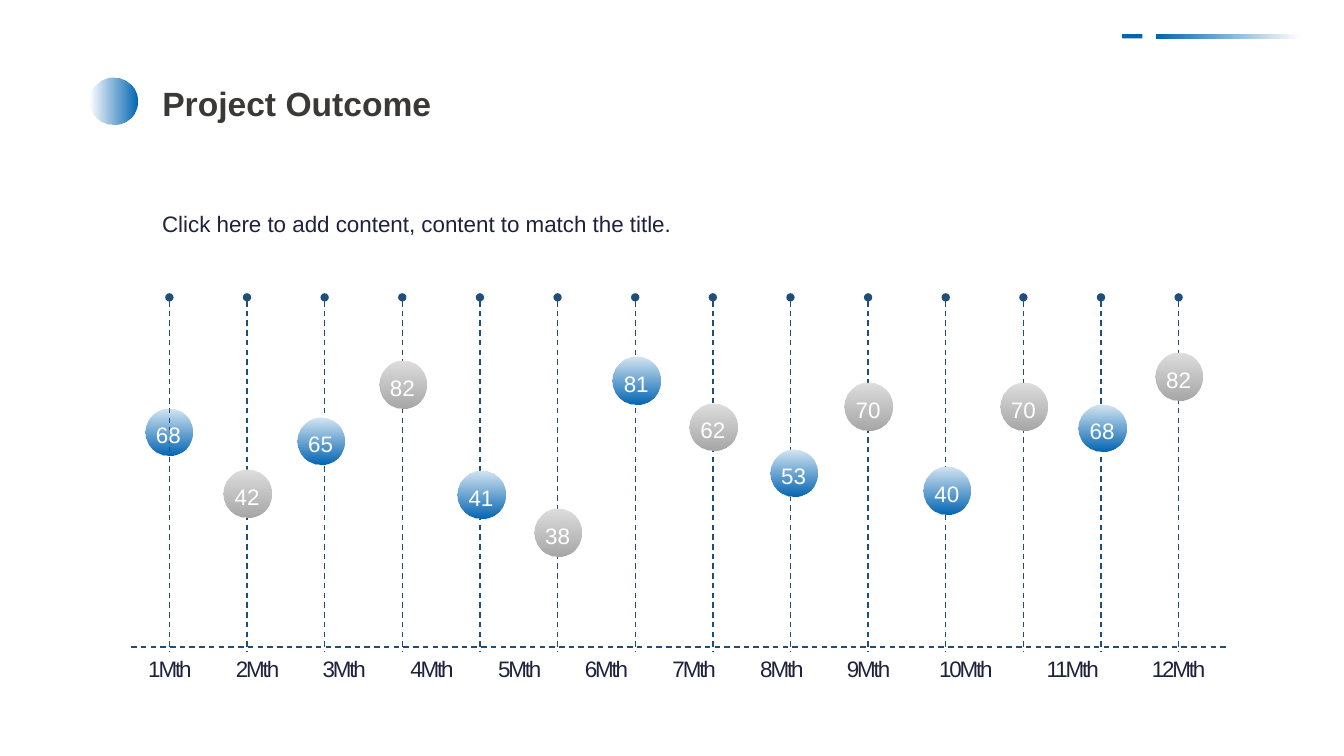
from dataclasses import dataclass

from lxml.etree import SubElement
from pptx import Presentation
from pptx.dml.color import RGBColor
from pptx.enum.dml import MSO_LINE
from pptx.enum.shapes import MSO_CONNECTOR, MSO_SHAPE as Shape
from pptx.enum.text import MSO_ANCHOR, MSO_AUTO_SIZE, PP_ALIGN as Align
from pptx.oxml.ns import qn
from pptx.util import Pt

EMU_PER_PX = 9144  # 100 px to the inch


@dataclass(frozen=True)
class Theme:
    font: str = "Arial"
    heading: str = "3B3838"
    ink: str = "1E223B"
    line: str = "1F4E79"
    blue: str = "0065B3"
    grey: str = "A6A6A6"
    white: str = "FFFFFF"
    title_size: int = 24
    text_size: int = 16
    line_width: int = 1


def px(*lengths):
    return [round(length) * EMU_PER_PX for length in lengths]


def write(frame, words, *, font, size, color, bold=False, align=Align.LEFT,
          spacing=None, tracking=None):
    """Fill a text frame with one formatted paragraph; tracking is in points."""
    frame.word_wrap = True
    frame.auto_size = MSO_AUTO_SIZE.SHAPE_TO_FIT_TEXT
    frame.vertical_anchor = MSO_ANCHOR.TOP
    para = frame.paragraphs[0]
    para.alignment = align
    if spacing:
        para.line_spacing = spacing
    span = para.add_run()
    span.text = words
    span.font.name = font
    span.font.size = Pt(size)
    span.font.bold = bold
    span.font.color.rgb = RGBColor.from_string(color)
    if tracking:
        span.font._element.set("spc", str(round(tracking * 100)))


class Painter:
    def __init__(self, page, theme):
        self.page = page
        self.theme = theme

    def title(self, words, *place):
        holder = self.page.shapes.title
        holder.left, holder.top, holder.width, holder.height = px(*place)
        write(holder.text_frame, words, font=self.theme.font, bold=True,
              size=self.theme.title_size, color=self.theme.heading)

    def text(self, words, *place, shapes=None, color=None, **style):
        box = (shapes or self.page.shapes).add_textbox(*px(*place))
        write(box.text_frame, words, font=self.theme.font, size=self.theme.text_size,
              color=color or self.theme.ink, spacing=1.3, **style)

    def solid(self, kind, color, *place, shapes=None):
        shape = (shapes or self.page.shapes).add_shape(kind, *px(*place))
        shape.shadow.inherit = False
        shape.line.fill.background()
        shape.fill.solid()
        shape.fill.fore_color.rgb = RGBColor.from_string(color)
        return shape

    def fade(self, kind, color, *place, opacity=0, angle=0, shapes=None):
        """Draw a shape whose fill runs from the given opacity (percent) to full."""
        shape = self.solid(kind, color, *place, shapes=shapes)
        shape.fill.gradient()
        shape.fill.gradient_angle = angle
        for stop in shape.fill.gradient_stops:
            stop.color.rgb = RGBColor.from_string(color)
        first = next(shape.element.spPr.iter(qn("a:srgbClr")))
        SubElement(first, qn("a:alpha"), val=str(opacity * 1000))

    def dashed_line(self, *ends, dot=False):
        line = self.page.shapes.add_connector(MSO_CONNECTOR.STRAIGHT, *px(*ends))
        line.line.color.rgb = RGBColor.from_string(self.theme.line)
        line.line.width = Pt(self.theme.line_width)
        line.line.dash_style = MSO_LINE.DASH
        properties = line.element.spPr
        if dot:
            SubElement(properties.find(qn("a:ln")), qn("a:headEnd"), type="oval")
        SubElement(properties, qn("a:effectLst"))

    def badge(self, value, left, top, *, color, opacity, backed):
        shapes = self.page.shapes.add_group_shape().shapes
        place = left, top, 47, 47
        if backed:
            self.solid(Shape.OVAL, self.theme.white, *place, shapes=shapes)
        self.fade(Shape.OVAL, color, *place, opacity=opacity, angle=270, shapes=shapes)
        self.text(str(value), left - 13, top, 72, 42, shapes=shapes,
                  color=self.theme.white, align=Align.CENTER)


# value, left, top and colour of each badge, one to a vertical line
BADGES = [
    (68, 144, 405, "blue"), (42, 222, 466, "grey"), (65, 295, 414, "blue"),
    (82, 376, 358, "grey"), (41, 454, 467, "blue"), (38, 530, 505, "grey"),
    (81, 608, 354, "blue"), (62, 684, 400, "grey"), (53, 764, 446, "blue"),
    (70, 838, 380, "grey"), (40, 916, 463, "blue"), (70, 992, 380, "grey"),
    (68, 1070, 401, "blue"), (82, 1146, 350, "grey"),
]


def main():
    deck = Presentation()
    deck.slide_width, deck.slide_height = px(1333, 750)
    theme = Theme()
    painter = Painter(deck.slides.add_slide(deck.slide_layouts[5]), theme)

    painter.fade(Shape.RECTANGLE, theme.blue, 1147, 34, 141, 4, angle=180)
    painter.solid(Shape.RECTANGLE, theme.blue, 1113, 34, 20, 4)
    painter.fade(Shape.FLOWCHART_CONNECTOR, theme.blue, 89, 77, 47, 47)
    painter.title("Project Outcome", 151, 77, 316, 50)
    painter.text("Click here to add content, content to match the title.",
                 151, 196, 593, 41)

    painter.dashed_line(130, 642, 1217, 642)
    for month in range(1, 13):
        if month < 10:
            left, width = 130 + (month - 1) * 86.67, 77
        else:
            left, width = 910 + (month - 10) * 105.5, 96
        painter.text(f"{month}Mth", left, 637, width, 42,
                     align=Align.CENTER, tracking=-1.5)

    for index in range(len(BADGES)):
        across = 168 + 77 * index
        painter.dashed_line(across, 295, across, 646, dot=True)

    looks = {"blue": (theme.blue, 16), "grey": (theme.grey, 36)}
    for index, (value, left, top, look) in enumerate(BADGES):
        color, opacity = looks[look]
        painter.badge(value, left, top, color=color, opacity=opacity, backed=index > 0)

    deck.save("out.pptx")


if __name__ == "__main__":
    main()
